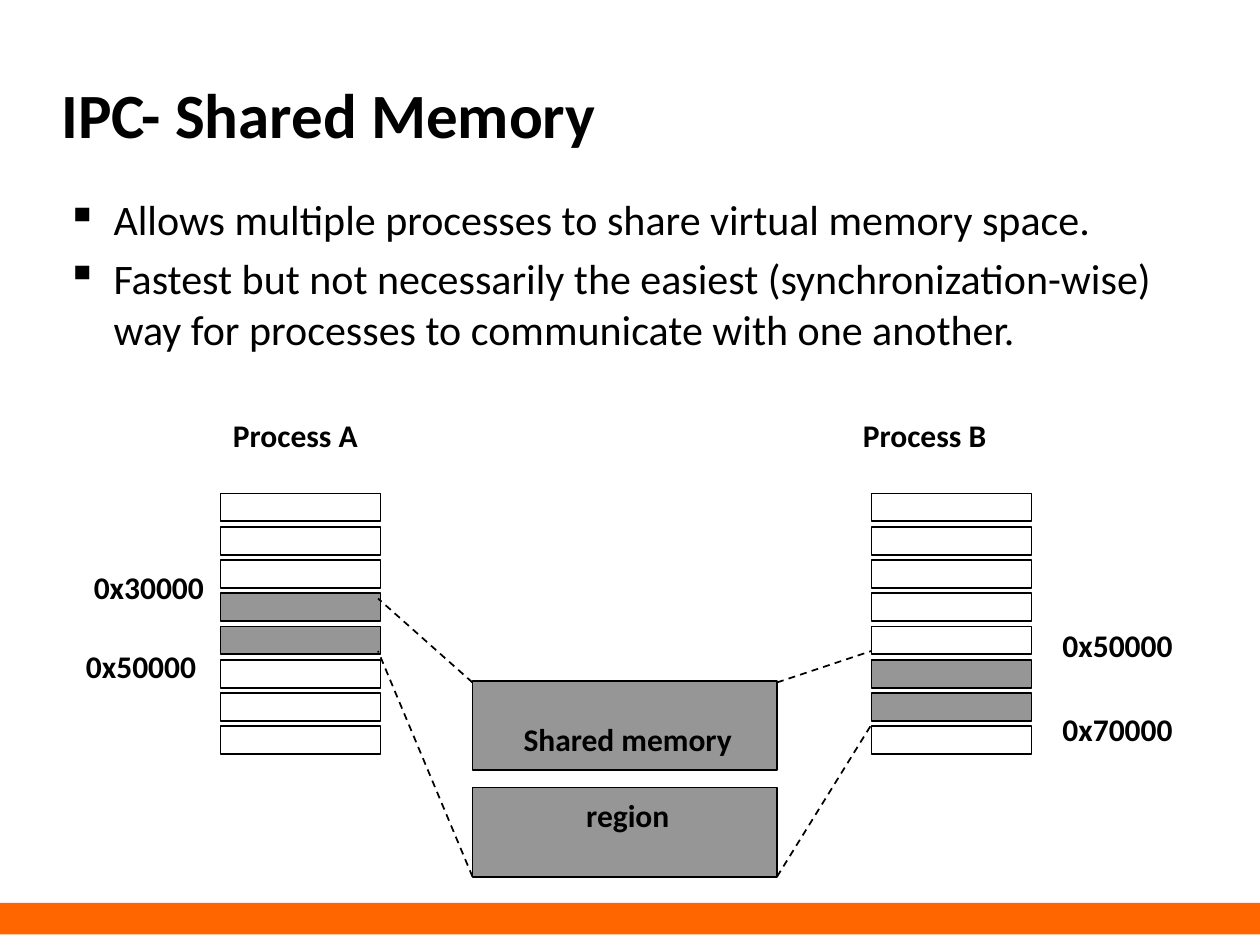
import pptx
import pptx.dml.color
import pptx.enum.dml
import pptx.enum.shapes
import pptx.enum.text
import pptx.oxml
import pptx.oxml.ns
import pptx.util

Pt = pptx.util.Pt
ALIGN = pptx.enum.text.PP_ALIGN
ANCHOR = pptx.enum.text.MSO_ANCHOR
COLOURS = {"ink": "000000", "shared": "969696", "band": "FF6600"}


def colour(name):
    return pptx.dml.color.RGBColor.from_string(COLOURS[name])


def write(para, text, size=18, bold=False, align=ALIGN.LEFT, before=0,
          hanging=0, bullet=None, font="Calibri"):
    """Fill a paragraph with one formatted span."""
    para.alignment = align
    para.space_before = Pt(before)
    span = para.add_run()
    span.text = text
    span.font.name = font
    span.font.size = Pt(size)
    span.font.bold = bold
    span.font.color.rgb = colour("ink")
    properties = para._p.get_or_add_pPr()
    if hanging:
        properties.set("marL", str(Pt(hanging)))
        properties.set("indent", str(-Pt(hanging)))
    if bullet:
        mark = pptx.oxml.parse_xml(
            f'<a:buChar {pptx.oxml.ns.nsdecls("a")} char="{bullet}"/>')
        properties.append(mark)


class Painter:
    """Holds the line style and the current page."""

    def __init__(self, page, line_width=1):
        self.page = page
        self.line_width = line_width

    def title(self, text, left, top, width, height):
        box = self.page.shapes.title
        box.left, box.top, box.width, box.height = map(Pt, (left, top, width, height))
        box.text_frame.vertical_anchor = ANCHOR.MIDDLE
        write(box.text_frame.paragraphs[0], text, size=36, bold=True, hanging=9.4)

    def text(self, lines, left, top, width, height, wrap=False, gaps=None, **style):
        box = self.page.shapes.add_textbox(*map(Pt, (left, top, width, height)))
        frame = box.text_frame
        frame.word_wrap = wrap
        for index, line in enumerate(lines):
            para = frame.add_paragraph() if index else frame.paragraphs[0]
            write(para, line, before=gaps[index] if gaps else 0, **style)

    def block(self, left, top, width, height, fill=None, outline=True):
        box = self.page.shapes.add_shape(
            pptx.enum.shapes.MSO_SHAPE.RECTANGLE, *map(Pt, (left, top, width, height)))
        box.shadow.inherit = False
        if fill:
            box.fill.solid()
            box.fill.fore_color.rgb = colour(fill)
        else:
            box.fill.background()
        if outline:
            box.line.color.rgb = colour("ink")
            box.line.width = Pt(self.line_width)
        else:
            box.line.fill.background()

    def dashed(self, x1, y1, x2, y2):
        line = self.page.shapes.add_connector(
            pptx.enum.shapes.MSO_CONNECTOR.STRAIGHT, *map(Pt, (x1, y1, x2, y2)))
        line.line.color.rgb = colour("ink")
        line.line.width = Pt(self.line_width)
        line.line.dash_style = pptx.enum.dml.MSO_LINE.DASH
        line._element.spPr.append(pptx.oxml.parse_xml(
            f'<a:effectLst {pptx.oxml.ns.nsdecls("a")}/>'))

    def memory(self, left, shared, top=282, pitch=19, count=8):
        for row in range(count):
            fill = "shared" if row in shared else None
            self.block(left, top + row * pitch, 91.5, 16, fill=fill)


def main():
    deck = pptx.Presentation()
    deck.slide_width, deck.slide_height = Pt(720), Pt(540)
    painter = Painter(deck.slides.add_slide(deck.slide_layouts[5]))

    # Footer band, title and bullets
    painter.block(0, 516, 720, 18, fill="band", outline=False)
    painter.title("IPC- Shared Memory", 28, 34.5, 598, 60)
    painter.text(
        ["Allows multiple processes to share virtual memory space.",
         "Fastest but not necessarily the easiest (synchronization-wise) "
         "way for processes to communicate with one another."],
        31, 107.3, 641, 168.5, wrap=True, gaps=[4.8, 4.8],
        size=24, hanging=26.8, bullet="▪")

    # Address spaces of the two processes
    painter.memory(126, shared=(3, 4))
    painter.memory(498, shared=(5, 6))

    # Shared region
    for top in (389, 450):
        painter.block(270, top, 174, 51, fill="shared")
    painter.text(["Shared memory", "region"], 291, 408, 135.5, 73,
                 gaps=[0, 22], bold=True, align=ALIGN.CENTER)

    # Mapping from each process to the region
    for region_x, process_x, upper, lower in ((270, 216, 342, 372), (444, 498, 372, 414)):
        painter.dashed(region_x, 390, process_x, upper)
        painter.dashed(region_x, 501, process_x, lower)

    # Process names and addresses
    for label, left, top, width in (
            ("Process A", 126, 234, 87), ("Process B", 486, 234, 86),
            ("0x30000", 46.5, 321, 78.5), ("0x50000", 42, 366, 78.5),
            ("0x50000", 600, 354, 78.5), ("0x70000", 600, 402, 78.5)):
        painter.text([label], left, top, width, 29, bold=True)

    deck.save("out.pptx")


if __name__ == "__main__":
    main()
